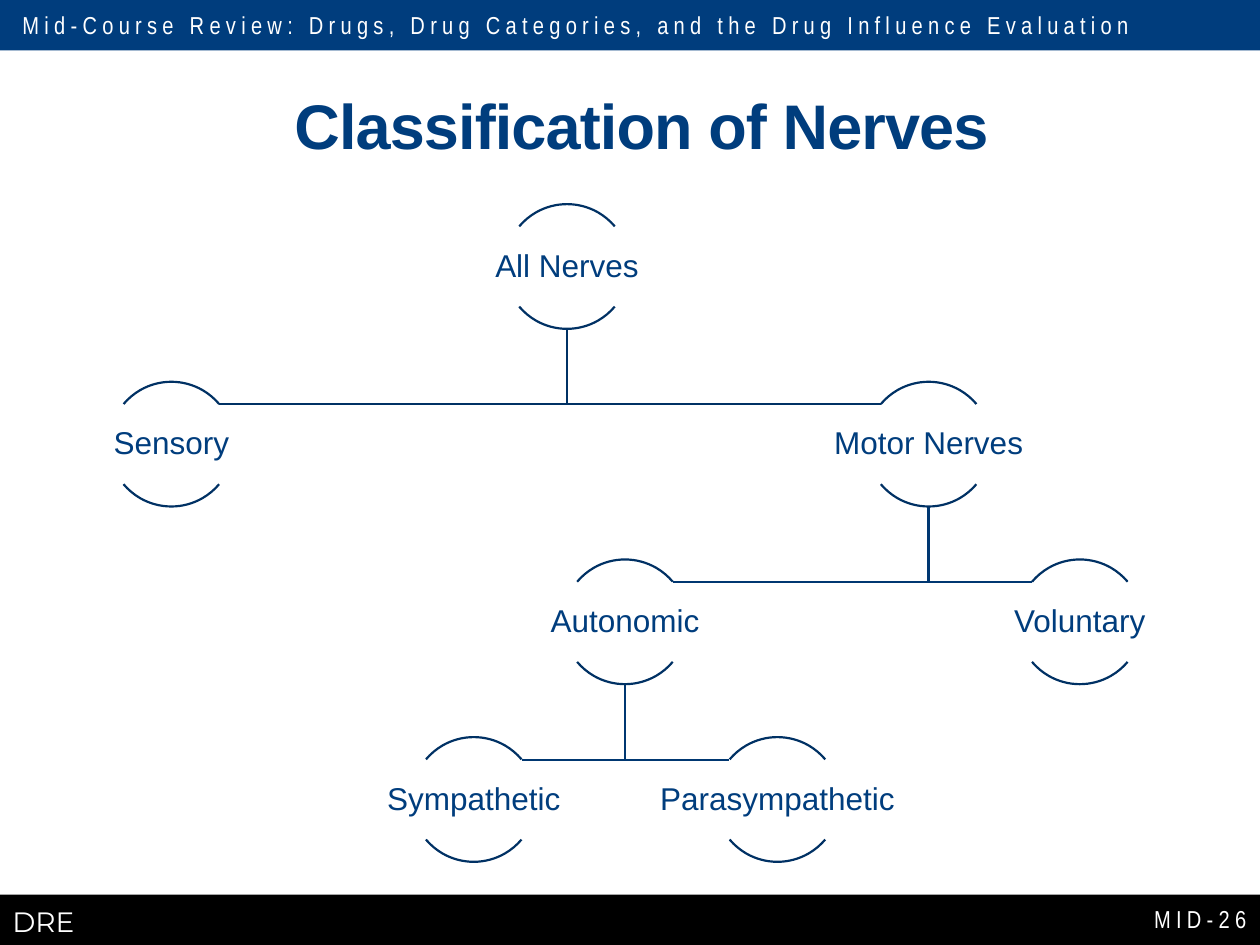
from dataclasses import dataclass

from pptx import Presentation
from pptx.dml.color import RGBColor
from pptx.enum import shapes, text
from pptx.util import Inches, Pt

# Content
HEADER = "Mid-Course Review: Drugs, Drug Categories, and the Drug Influence Evaluation"
TITLE = "Classification of Nerves"
COURSE = "DRE"
PAGE_NUMBER = "MID-26"
# name: (level, centre x, parent)
NERVES = {
    "All Nerves": (0, 4.5, None),
    "Sensory": (1, 1.36, "All Nerves"),
    "Motor Nerves": (1, 7.37, "All Nerves"),
    "Autonomic": (2, 4.96, "Motor Nerves"),
    "Voluntary": (2, 8.57, "Motor Nerves"),
    "Sympathetic": (3, 3.76, "Autonomic"),
    "Parasympathetic": (3, 6.17, "Autonomic"),
}


@dataclass(frozen=True)
class Theme:
    blue: str = "003D7D"
    arc: str = "003164"
    branch: str = "003771"
    black: str = "000000"
    white: str = "FFFFFF"
    body: str = "Arial"
    narrow: str = "Arial Narrow"
    brand: str = "Montserrat"
    title_size: float = 36
    label_size: float = 18
    brand_size: float = 16
    band_size: float = 14
    line: float = 1.25


THEME = Theme()

# Tree geometry, in inches
FIRST_TOP, LEVEL_STEP = 1.62, 1.41
DIAMETER = 0.99
LABEL_WIDTH, LABEL_HEIGHT = 1.99, 0.64
LABEL_DROP = 0.18      # from the top of the circle to its label
ARC_HALF_WIDTH = 0.38  # from the centre to the end of an arc
ARCS = ((132, 192), (24, 84))  # upper and lower, 100000ths of angle units


def colour(value):
    return RGBColor.from_string(value)


def write(frame, words, font, size, tint, align=text.PP_ALIGN.LEFT,
          anchor=text.MSO_ANCHOR.TOP, spacing=None, bold=False, tracking=0):
    frame.word_wrap = True
    frame.vertical_anchor = anchor
    para = frame.paragraphs[0]
    para.alignment = align
    if spacing:
        para.line_spacing = spacing
    span = para.add_run()
    span.text = words
    span.font.name, span.font.size, span.font.bold = font, Pt(size), bold
    span.font.color.rgb = colour(tint)
    if tracking:
        span.font._element.set("spc", str(int(tracking * 100)))


def add_text(page, area, words, *style, inset=None, **options):
    frame = page.shapes.add_textbox(*map(Inches, area)).text_frame
    if inset is not None:
        frame.margin_left = frame.margin_right = Inches(inset)
        frame.margin_top = frame.margin_bottom = Inches(inset)
    write(frame, words, *style, **options)


def add_band(page, top, fill):
    band = page.shapes.add_shape(shapes.MSO_SHAPE.RECTANGLE, 0, Inches(top),
                                 Inches(10), Inches(0.4))
    band.shadow.inherit = False
    band.fill.solid()
    band.fill.fore_color.rgb = colour(fill)
    band.line.fill.background()


def outline(shape, tint):
    shape.shadow.inherit = False
    shape.fill.background()
    shape.line.color.rgb = colour(tint)
    shape.line.width = Pt(THEME.line)


def level_top(level):
    return FIRST_TOP + level * LEVEL_STEP


def add_branch(page, level, centre, parent):
    parent_level, parent_x, _ = NERVES[parent]
    start_y = level_top(parent_level) + DIAMETER
    end_y = level_top(level) + LABEL_DROP
    side = 1 if parent_x > centre else -1
    end_x = centre + side * ARC_HALF_WIDTH
    builder = page.shapes.build_freeform(Inches(parent_x), Inches(start_y))
    builder.add_line_segments([(Inches(parent_x), Inches(end_y)),
                               (Inches(end_x), Inches(end_y))], close=False)
    outline(builder.convert_to_shape(), THEME.arc if level == 1 else THEME.branch)


def add_nerve(page, name, level, centre):
    top = level_top(level)
    for angles in ARCS:
        arc = page.shapes.add_shape(
            shapes.MSO_SHAPE.ARC, Inches(centre - DIAMETER / 2), Inches(top),
            Inches(DIAMETER), Inches(DIAMETER))
        arc.adjustments[0], arc.adjustments[1] = angles
        outline(arc, THEME.arc)
    area = (centre - LABEL_WIDTH / 2, top + LABEL_DROP, LABEL_WIDTH, LABEL_HEIGHT)
    add_text(page, area, name, THEME.body, THEME.label_size, THEME.blue, inset=0.01,
             align=text.PP_ALIGN.CENTER, anchor=text.MSO_ANCHOR.MIDDLE, spacing=0.9)


def main():
    deck = Presentation()
    deck.slide_width, deck.slide_height = Inches(10), Inches(7.5)
    page = deck.slides.add_slide(deck.slide_layouts[5])

    # Header and footer bands
    add_band(page, 7.1, THEME.black)
    add_band(page, 0, THEME.blue)
    add_text(page, (0.08, 0.03, 9.42, 0.34), HEADER, THEME.narrow,
             THEME.band_size, THEME.white, tracking=3)
    add_text(page, (0, 7.13, 1.87, 0.37), COURSE, THEME.brand,
             THEME.brand_size, THEME.white)
    add_text(page, (8.12, 7.09, 1.87, 0.4), PAGE_NUMBER, THEME.narrow,
             THEME.band_size, THEME.white, align=text.PP_ALIGN.RIGHT,
             anchor=text.MSO_ANCHOR.MIDDLE, tracking=3)

    # Title
    title = page.shapes.title
    title.left, title.top = Inches(1.09), Inches(0.65)
    title.width, title.height = Inches(8), Inches(0.77)
    write(title.text_frame, TITLE, THEME.body, THEME.title_size, THEME.blue,
          align=text.PP_ALIGN.CENTER, anchor=text.MSO_ANCHOR.MIDDLE,
          spacing=0.85, bold=True, tracking=-0.5)

    # Tree: branches behind, nerves in front
    for level, centre, parent in NERVES.values():
        if parent:
            add_branch(page, level, centre, parent)
    for name, (level, centre, _) in NERVES.items():
        add_nerve(page, name, level, centre)

    deck.save("out.pptx")


if __name__ == "__main__":
    main()
